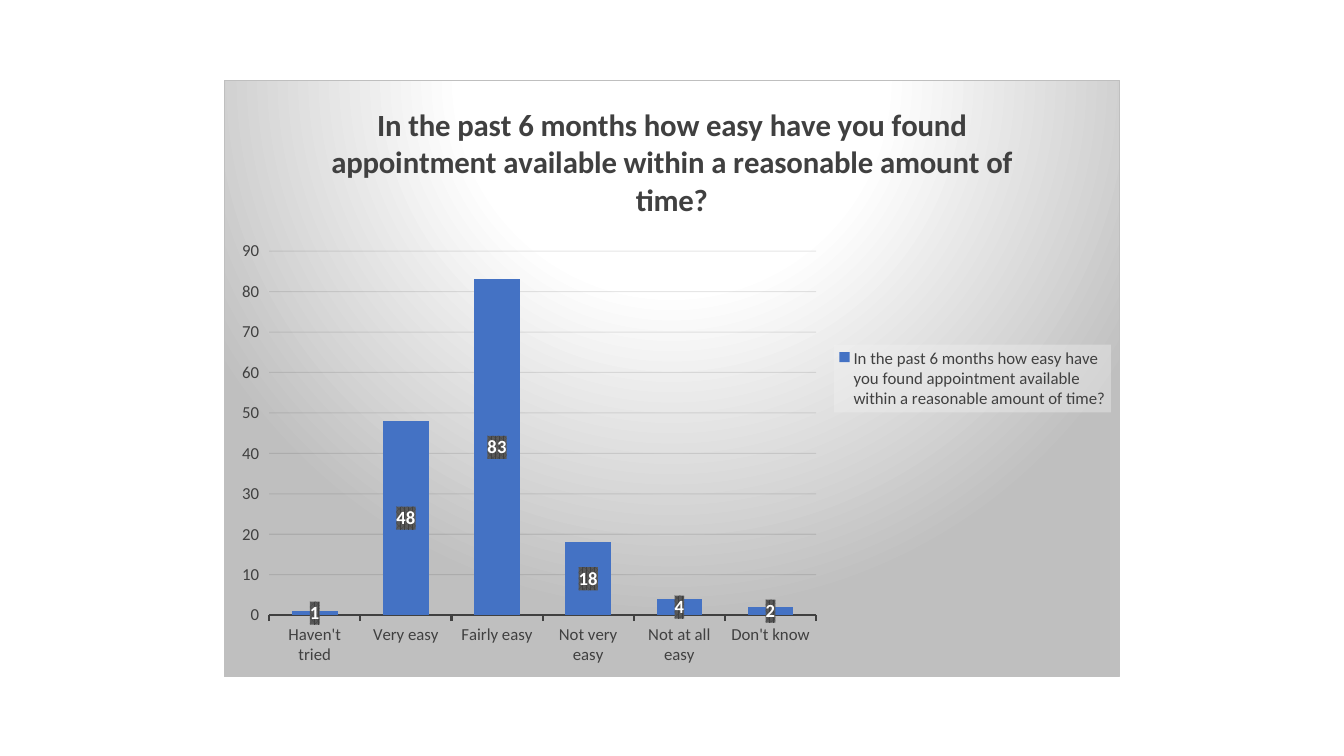
from lxml import etree
from pptx import Presentation
from pptx.chart.data import CategoryChartData
from pptx.dml.color import RGBColor
from pptx.enum.chart import (XL_CHART_TYPE, XL_LABEL_POSITION,
                             XL_LEGEND_POSITION, XL_TICK_MARK)
from pptx.oxml import parse_xml
from pptx.oxml.ns import nsdecls, qn
from pptx.util import Cm, Pt

COLUMNS = XL_CHART_TYPE.COLUMN_CLUSTERED
CENTER = XL_LABEL_POSITION.CENTER
RIGHT = XL_LEGEND_POSITION.RIGHT
OUTSIDE = XL_TICK_MARK.OUTSIDE

FONT = "Calibri"
COLORS = {
    "text": "404040", "bar": "4472C4", "label": "FFFFFF", "grid": "0D0D0D",
    "light": "FFFFFF", "dark": "BFBFBF", "legend": "F2F2F2", "pattern": "595959",
}
QUESTION = ("In the past 6 months how easy have you found appointment available "
            "within a reasonable amount of time?")
ANSWERS = {
    "Haven't tried": 1, "Very easy": 48, "Fairly easy": 83,
    "Not very easy": 18, "Not at all easy": 4, "Don't know": 2,
}


def set_font(font, size, color, bold=False):
    font.name, font.size, font.bold = FONT, Pt(size), bold
    font.color.rgb = RGBColor.from_string(COLORS[color])


def add_fill(element, fill):
    """Insert shape properties just before the element's text properties."""
    properties = parse_xml(f'<c:spPr {nsdecls("c", "a")}>{fill}</c:spPr>')
    element.find(qn("c:txPr")).addprevious(properties)


prs = Presentation()
prs.slide_width, prs.slide_height = Cm(33.87), Cm(19.05)
slide = prs.slides.add_slide(prs.slide_layouts[6])

# Survey chart
survey = CategoryChartData()
survey.categories = list(ANSWERS)
survey.add_series(QUESTION, list(ANSWERS.values()))
chart = slide.shapes.add_chart(
    COLUMNS, Cm(5.64), Cm(2.01), Cm(22.58), Cm(15.06), survey).chart
chart.font.name, chart.font.size = FONT, Pt(10)

# Background with a glow from the top
add_fill(chart.element if hasattr(chart, "element") else chart._chartSpace, f'''
<a:gradFill><a:gsLst>
  <a:gs pos="0"><a:srgbClr val="{COLORS["light"]}"/></a:gs>
  <a:gs pos="39000"><a:srgbClr val="{COLORS["light"]}"/></a:gs>
  <a:gs pos="100000"><a:srgbClr val="{COLORS["dark"]}"/></a:gs>
</a:gsLst><a:path path="circle">
  <a:fillToRect l="50000" t="-80000" r="50000" b="180000"/>
</a:path></a:gradFill>
<a:ln w="9525"><a:solidFill><a:srgbClr val="{COLORS["dark"]}"/></a:solidFill></a:ln>''')

# Title
chart.has_title = True
chart.chart_title.include_in_layout = False
title = chart.chart_title.text_frame
title.text = QUESTION
set_font(title.paragraphs[0].font, 22, "text", bold=True)

# Columns and their values
plot = chart.plots[0]
plot.gap_width = 100
plot.vary_by_categories = False
columns = plot.series[0]
columns.format.fill.solid()
columns.format.fill.fore_color.rgb = RGBColor.from_string(COLORS["bar"])
values = columns.data_labels
values.show_value = True
values.position = CENTER
set_font(values.font, 13.3, "label", bold=True)
add_fill(values._element, f'''
<a:pattFill prst="pct75">
  <a:fgClr><a:srgbClr val="{COLORS["text"]}"/></a:fgClr>
  <a:bgClr><a:srgbClr val="{COLORS["pattern"]}"/></a:bgClr>
</a:pattFill>''')

# Axes
for axis in (chart.category_axis, chart.value_axis):
    set_font(axis.tick_labels.font, 12, "text")
    axis.major_tick_mark = OUTSIDE
answer_line = chart.category_axis.format.line
answer_line.width = Pt(1.5)
answer_line.color.rgb = RGBColor.from_string(COLORS["text"])
chart.value_axis.format.line.fill.background()

# Faint gridlines
grid = chart.value_axis.major_gridlines
grid.format.line.width = Pt(0.75)
grid.format.line.color.rgb = RGBColor.from_string(COLORS["grid"])
grid_color = chart.value_axis._element.find(qn("c:majorGridlines")).find(
    ".//" + qn("a:srgbClr"))
etree.SubElement(grid_color, qn("a:alpha"), val="10000")

# Legend
chart.has_legend = True
chart.legend.position = RIGHT
chart.legend.include_in_layout = False
set_font(chart.legend.font, 12, "text")
add_fill(chart.legend._element, f'''
<a:solidFill><a:srgbClr val="{COLORS["legend"]}"><a:alpha val="39000"/></a:srgbClr>
</a:solidFill>''')

prs.save("out.pptx")
